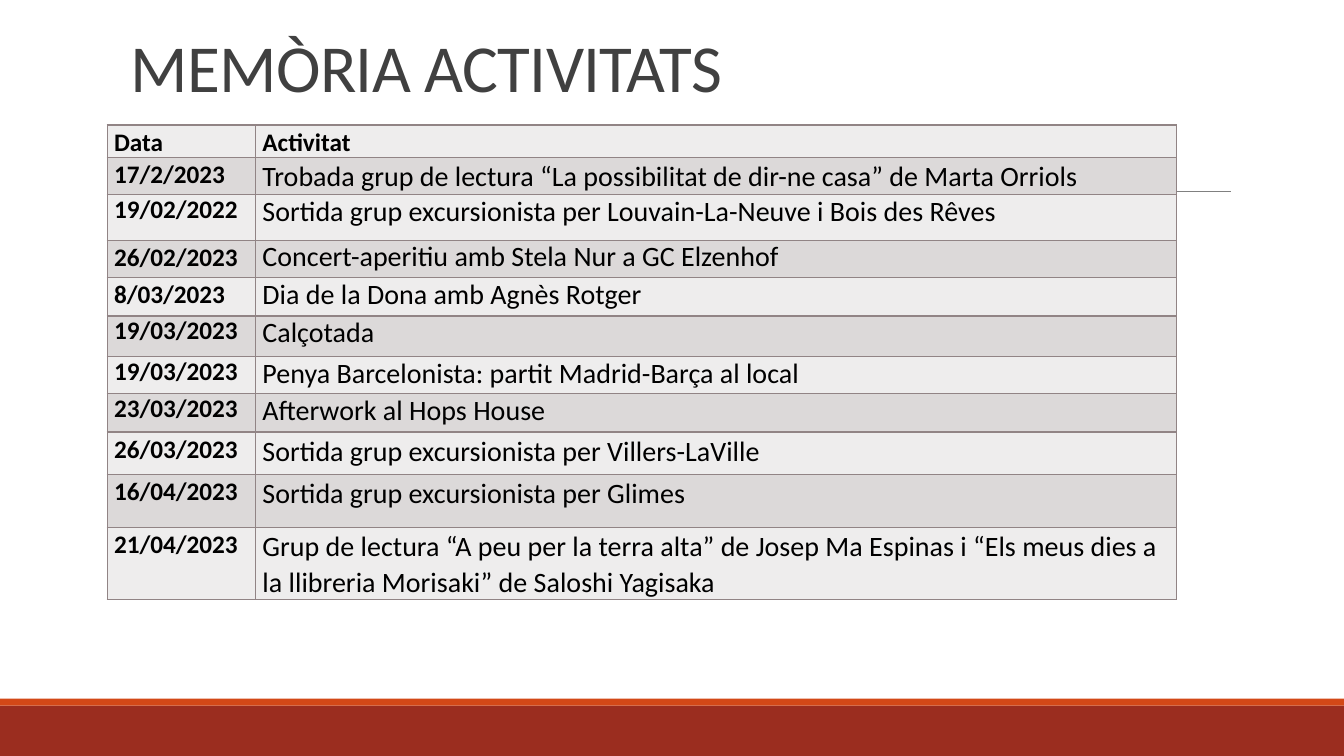
from lxml.etree import SubElement as Sub
from pptx import Presentation
from pptx.dml.color import RGBColor as Rgb
from pptx.enum.shapes import MSO_CONNECTOR as Conn, MSO_SHAPE as Shape
from pptx.enum.text import MSO_ANCHOR as Anchor
from pptx.oxml.ns import qn
from pptx.util import Pt

WIDE, HIGH = 960, 540
FONT = "Calibri"
COLS = (106, 658)
# row height, line spacing of the date, line spacing of the activity, texts
ROWS = (
    (21, 1.07, 1.07, "Data", "Activitat"),
    (26.6, 1.07, 1.07, "17/2/2023",
     "Trobada grup de lectura “La possibilitat de dir-ne casa” de Marta Orriols"),
    (32.6, 1, 1, "19/02/2022",
     "Sortida grup excursionista per Louvain-La-Neuve i Bois des Rêves"),
    (26.6, 1.07, 1, "26/02/2023", "Concert-aperitiu amb Stela Nur a GC Elzenhof"),
    (27.5, 1.07, 1, "8/03/2023", "Dia de la Dona amb Agnès Rotger"),
    (28.8, 1, 1, "19/03/2023", "Calçotada"),
    (26.6, 1, 1, "19/03/2023", "Penya Barcelonista: partit Madrid-Barça al local"),
    (27.5, 1, 1, "23/03/2023", "Afterwork al Hops House"),
    (30.4, 1.07, 1.07, "26/03/2023", "Sortida grup excursionista per Villers-LaVille"),
    (37.6, 1.07, 1.07, "16/04/2023", "Sortida grup excursionista per Glimes"),
    (37.6, 1.07, 1.07, "21/04/2023",
     "Grup de lectura “A peu per la terra alta” de Josep Ma Espinas i "
     "“Els meus dies a la llibreria Morisaki” de Saloshi Yagisaka"),
)


def paint(fill, color):
    fill.solid()
    fill.fore_color.rgb = Rgb.from_string(color)


def style(para, size, color, space, bold=False):
    para.line_spacing = space
    font = para.font
    font.name, font.size, font.bold = FONT, Pt(size), bold
    font.color.rgb = Rgb.from_string(color)


def add_bar(slide, left, top, width, height, color):
    bar = slide.shapes.add_shape(
        Shape.RECTANGLE, Pt(left), Pt(top), Pt(width), Pt(height))
    bar.shadow.inherit = False
    paint(bar.fill, color)
    bar.line.fill.background()


def add_rule(slide, left, top, width):
    rule = slide.shapes.add_connector(
        Conn.STRAIGHT, Pt(left), Pt(top), Pt(left + width), Pt(top))
    paint(rule.line.fill, "808080")
    rule.line.width = Pt(0.5)
    Sub(rule._element.spPr, qn("a:effectLst"))


def add_title(slide, left, top, width, height):
    frame = slide.shapes.add_textbox(
        Pt(left), Pt(top), Pt(width), Pt(height)).text_frame
    frame.word_wrap = True
    frame.vertical_anchor = Anchor.BOTTOM
    para = frame.paragraphs[0]
    run = para.add_run()
    run.text = "MEMÒRIA ACTIVITATS"
    style(para, 48, "404040", 0.85)
    run.font._element.set("spc", "-50")


def add_edges(cell, color, width):
    props = cell._tc.get_or_add_tcPr()
    for side in ("lnL", "lnR", "lnT", "lnB"):
        edge = Sub(props, qn("a:" + side), w=str(Pt(width)))
        Sub(Sub(edge, qn("a:solidFill")), qn("a:srgbClr"), val=color)


def fill_cell(cell, text, size, space, bold, color):
    cell.margin_left = cell.margin_right = Pt(5)
    cell.margin_top = cell.margin_bottom = 0
    add_edges(cell, "918485", 1)
    paint(cell.fill, color)
    cell.text = text
    style(cell.text_frame.paragraphs[0], size, "000000", space, bold)


def add_agenda(slide, left, top):
    high = sum(row[0] for row in ROWS)
    table = slide.shapes.add_table(
        len(ROWS), len(COLS), Pt(left), Pt(top), Pt(sum(COLS)), Pt(high)).table
    for col, width in zip(table.columns, COLS):
        col.width = Pt(width)
    for i, (height, *spaces, date, event) in enumerate(ROWS):
        table.rows[i].height = Pt(height)
        color = "DCD9D9" if i % 2 else "EEEDED"
        for j, text in enumerate((date, event)):
            head = i == 0 or j == 0
            fill_cell(table.cell(i, j), text, 18 if head else 20,
                      spaces[j], head, color)


def main():
    deck = Presentation()
    deck.slide_width, deck.slide_height = Pt(WIDE), Pt(HIGH)
    slide = deck.slides.add_slide(deck.slide_layouts[6])
    add_bar(slide, 0, HIGH - 36, WIDE, 36, "9B2D1F")
    add_bar(slide, 0, HIGH - 41, WIDE, 5, "D34817")
    add_rule(slide, 94, 136.8, 785)
    add_title(slide, 86.4, 18.7, 802, 60.5)
    add_agenda(slide, 76.5, 89.3)
    deck.save("out.pptx")


if __name__ == "__main__":
    main()
